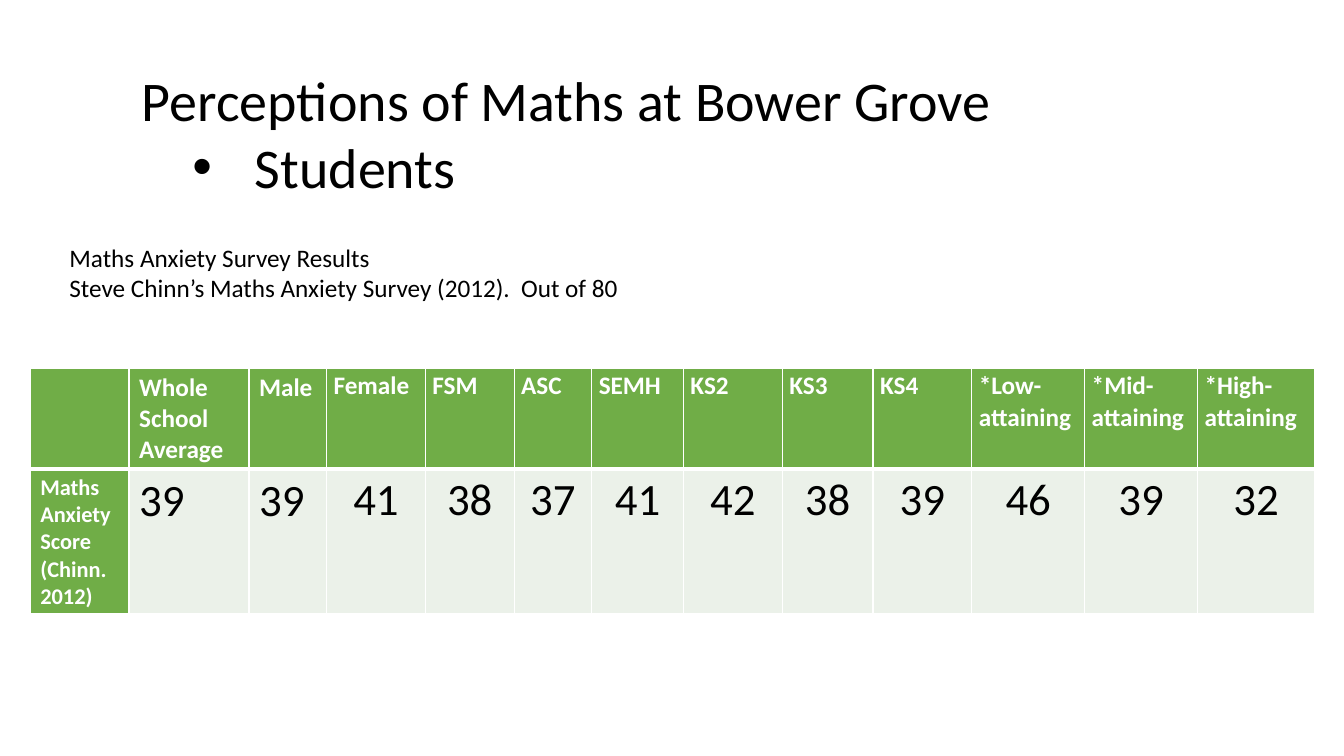
import pptx
import pptx.dml.color
import pptx.enum.text
import pptx.oxml.ns
import pptx.util
from lxml import etree
from pptx.util import Inches

BLACK = pptx.dml.color.RGBColor(0x00, 0x00, 0x00)
WHITE = pptx.dml.color.RGBColor(0xFF, 0xFF, 0xFF)
GREEN = pptx.dml.color.RGBColor(0x70, 0xAD, 0x47)
PALE = pptx.dml.color.RGBColor(0xEB, 0xF1, 0xE9)
LEFT = pptx.enum.text.PP_ALIGN.LEFT
CENTER = pptx.enum.text.PP_ALIGN.CENTER
qn = pptx.oxml.ns.qn


def write(tf, text, size=18, color=BLACK, bold=False, align=LEFT, spacing=None):
    for i, line in enumerate(text.split("\n")):
        p = tf.add_paragraph() if i else tf.paragraphs[0]
        p.alignment = align
        if spacing:
            p.line_spacing = spacing
        r = p.add_run()
        r.text = line
        r.font.name = "Calibri"
        r.font.size = pptx.util.Pt(size)
        r.font.bold = bold
        r.font.color.rgb = color


def add_borders(cell, bottom):
    tcPr = cell._tc.get_or_add_tcPr()
    for tag, width in (("lnL", 1), ("lnR", 1), ("lnT", 1), ("lnB", bottom)):
        ln = etree.SubElement(tcPr, qn("a:" + tag), w=str(pptx.util.Pt(width)))
        fill = etree.SubElement(ln, qn("a:solidFill"))
        etree.SubElement(fill, qn("a:srgbClr"), val=str(WHITE))


prs = pptx.Presentation()
prs.slide_width = Inches(13.33)
prs.slide_height = Inches(7.5)
s = prs.slides.add_slide(prs.slide_layouts[6])

title = s.shapes.add_textbox(Inches(1.31), Inches(0.6), Inches(8.71), Inches(2.79))
tf = title.text_frame
tf.word_wrap = False
write(tf, "Perceptions of Maths at Bower Grove\nStudents", size=40)
p = tf.paragraphs[1]
p.level = 1
pPr = p._p.get_or_add_pPr()
pPr.set("marL", str(Inches(1.12)))
pPr.set("indent", str(Inches(-0.62)))
etree.SubElement(pPr, qn("a:buFont"), typeface="Arial")
etree.SubElement(pPr, qn("a:buChar"), char="•")

headers = ["", "Whole School Average", "Male", "Female", "FSM", "ASC", "SEMH",
           "KS2", "KS3", "KS4", "*Low- attaining", "*Mid-attaining", "*High-attaining"]
scores = ["Maths\nAnxiety\nScore\n(Chinn.\n2012)",
          "39", "39", "41", "38", "37", "41", "42", "38", "39", "46", "39", "32"]
widths = [0.98, 1.19, 0.77, 0.98, 0.88, 0.77, 0.91, 0.98, 0.9, 0.98, 1.12, 1.12, 1.16]

table = s.shapes.add_table(2, len(headers), Inches(0.3), Inches(3.65),
                           Inches(12.73), Inches(1.54)).table
table.first_col = True
for col, width in zip(table.columns, widths):
    col.width = Inches(width)

for row, texts in enumerate((headers, scores)):
    for col, text in enumerate(texts):
        cell = table.cell(row, col)
        heading = row == 0 or col == 0
        compact = col > 2
        add_borders(cell, bottom=1 if row else 3)
        cell.fill.solid()
        cell.fill.fore_color.rgb = GREEN if heading else PALE
        if compact:
            cell.margin_left = cell.margin_right = Inches(0.07)
            cell.margin_top = cell.margin_bottom = 0
        if text:
            write(cell.text_frame, text,
                  size=18 if row == 0 else 16 if col == 0 else 32,
                  color=WHITE if heading else BLACK, bold=heading,
                  align=CENTER if row and compact else LEFT,
                  spacing=1.07 if compact else None)

caption = s.shapes.add_textbox(Inches(0.59), Inches(2.35), Inches(5.71), Inches(0.71))
caption.text_frame.word_wrap = False
write(caption.text_frame,
      "Maths Anxiety Survey Results\nSteve Chinn’s Maths Anxiety Survey (2012).  Out of 80")

prs.save("out.pptx")
